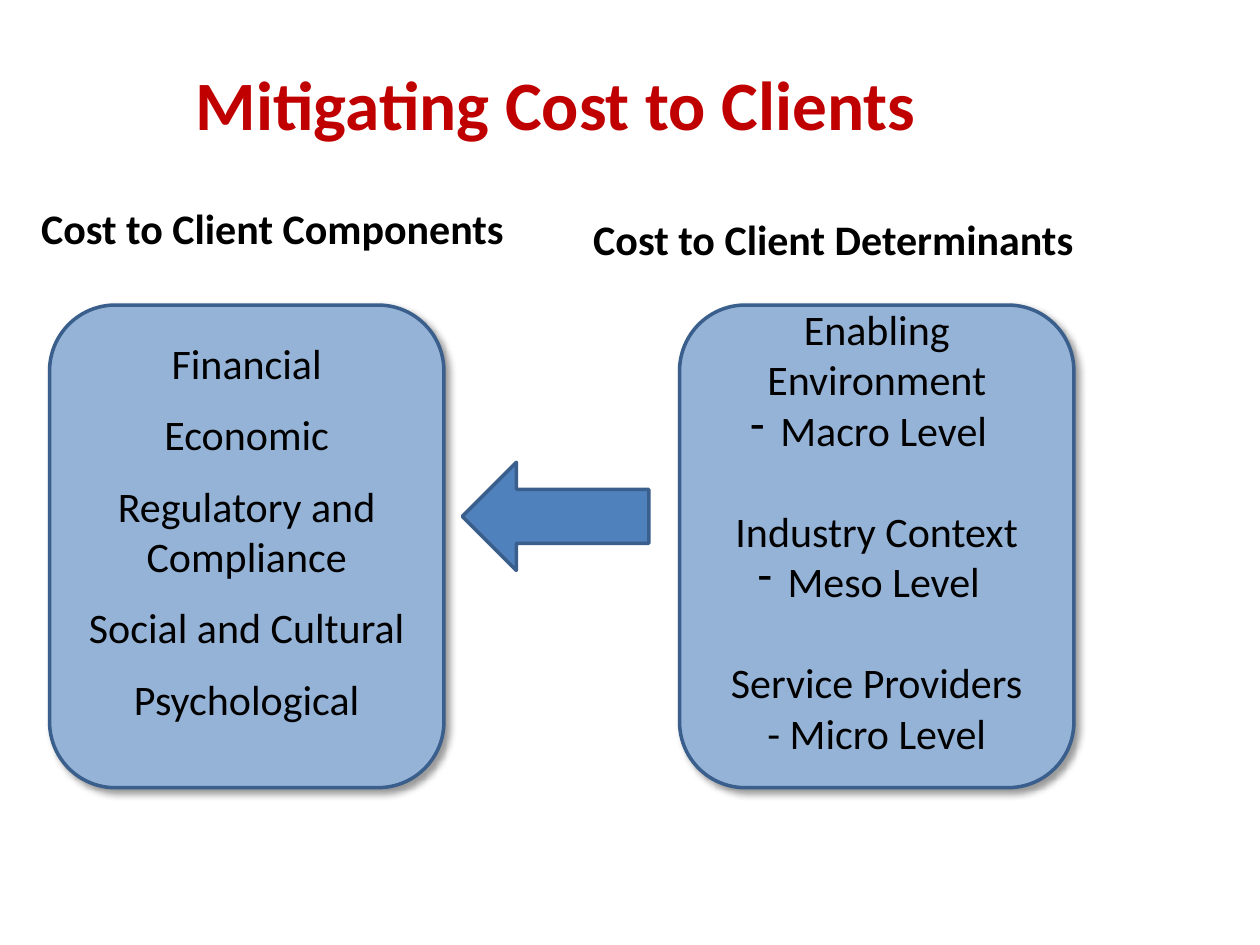
from typing import NamedTuple

from lxml.etree import SubElement
from pptx import Presentation
from pptx.dml.color import RGBColor
from pptx.enum.shapes import MSO_SHAPE
from pptx.enum.text import MSO_ANCHOR, MSO_AUTO_SIZE, PP_ALIGN
from pptx.oxml import parse_xml
from pptx.oxml.ns import nsdecls, qn
from pptx.util import Cm, Pt

RED = RGBColor(0xC0, 0x00, 0x00)
BLACK = RGBColor(0x00, 0x00, 0x00)
BLUE = RGBColor(0x4F, 0x81, 0xBD)
LIGHT_BLUE = RGBColor(0x95, 0xB3, 0xD7)
OUTLINE = RGBColor(0x3A, 0x5F, 0x8C)
FONT = "Calibri"
BODY_SIZE = 24
PANEL_TOP, PANEL_WIDTH, PANEL_HEIGHT = Cm(6.15), Cm(7.95), Cm(9.73)


class Heading(NamedTuple):
    text: str
    left: float
    top: float
    width: float


class Item(NamedTuple):
    text: str
    space_before: float = 0
    bullet: str = ""


class Panel(NamedTuple):
    left: float
    items: list[Item]


HEADINGS = [
    Heading("Cost to Client Components", 0.58, 3.96, 10.4),
    Heading("Cost to Client Determinants", 11.71, 4.17, 10.4),
]
PANELS = [
    Panel(1, [
        Item("Financial"),
        Item("Economic", 12),
        Item("Regulatory and Compliance", 12),
        Item("Social and Cultural", 12),
        Item("Psychological", 12),
    ]),
    Panel(13.7, [
        Item("Enabling Environment"),
        Item("Macro Level", bullet="-"),
        Item("Industry Context", 29),
        Item("Meso Level", bullet="-"),
        Item("Service Providers", 29),
        Item("- Micro Level"),
    ]),
]


def style_font(paragraph, size: float, color: RGBColor, bold: bool = False) -> None:
    for run in paragraph.runs:
        run.font.name = FONT
        run.font.size = Pt(size)
        run.font.bold = bold
        run.font.color.rgb = color


def style_shape(shape, fill: RGBColor) -> None:
    shape.shadow.inherit = False
    shape.fill.solid()
    shape.fill.fore_color.rgb = fill
    shape.line.color.rgb = OUTLINE
    shape.line.width = Pt(2)


def add_soft_shadow(shape) -> None:
    effects = shape._element.spPr.find(qn("a:effectLst"))
    effects.append(parse_xml(
        f'<a:outerShdw {nsdecls("a")} blurRad="{Pt(4)}" dist="{Pt(3)}" dir="2700000" '
        'algn="tl" rotWithShape="0"><a:srgbClr val="000000">'
        '<a:alpha val="40000"/></a:srgbClr></a:outerShdw>'
    ))


def add_title(slide) -> None:
    title = slide.shapes.title
    title.left, title.top, title.width, title.height = Cm(0.79), Cm(0.76), Cm(20.83), Cm(2.62)
    text_frame = title.text_frame
    text_frame.text = "Mitigating Cost to Clients"
    text_frame.auto_size = MSO_AUTO_SIZE.NONE
    text_frame.vertical_anchor = MSO_ANCHOR.MIDDLE
    text_frame.paragraphs[0].alignment = PP_ALIGN.CENTER
    style_font(text_frame.paragraphs[0], 39.6, RED, bold=True)


def add_heading(slide, heading: Heading) -> None:
    box = slide.shapes.add_textbox(
        Cm(heading.left), Cm(heading.top), Cm(heading.width), Cm(1.27))
    box.text_frame.word_wrap = True
    box.text_frame.text = heading.text
    style_font(box.text_frame.paragraphs[0], BODY_SIZE, BLACK, bold=True)


def add_panel(slide, panel: Panel) -> None:
    shape = slide.shapes.add_shape(
        MSO_SHAPE.ROUNDED_RECTANGLE, Cm(panel.left), PANEL_TOP, PANEL_WIDTH, PANEL_HEIGHT)
    style_shape(shape, LIGHT_BLUE)
    add_soft_shadow(shape)
    text_frame = shape.text_frame
    text_frame.word_wrap = True
    text_frame.vertical_anchor = MSO_ANCHOR.MIDDLE
    text_frame.margin_bottom = Cm(0.76)
    text_frame.text = "\n".join(item.text for item in panel.items)
    for paragraph, item in zip(text_frame.paragraphs, panel.items):
        paragraph.alignment = PP_ALIGN.CENTER
        if item.space_before:
            paragraph.space_before = Pt(item.space_before)
        if item.bullet:
            properties = paragraph._p.get_or_add_pPr()
            SubElement(properties, qn("a:buChar")).set("char", item.bullet)
        style_font(paragraph, BODY_SIZE, BLACK)


def add_arrow(slide) -> None:
    arrow = slide.shapes.add_shape(
        MSO_SHAPE.LEFT_ARROW, Cm(9.32), Cm(9.32), Cm(3.76), Cm(2.18))
    style_shape(arrow, BLUE)


def main() -> None:
    presentation = Presentation()
    presentation.slide_width, presentation.slide_height = Cm(25.4), Cm(19.05)
    slide = presentation.slides.add_slide(presentation.slide_layouts[5])
    add_title(slide)
    for heading in HEADINGS:
        add_heading(slide, heading)
    add_arrow(slide)
    for panel in PANELS:
        add_panel(slide, panel)
    presentation.save("out.pptx")


if __name__ == "__main__":
    main()
